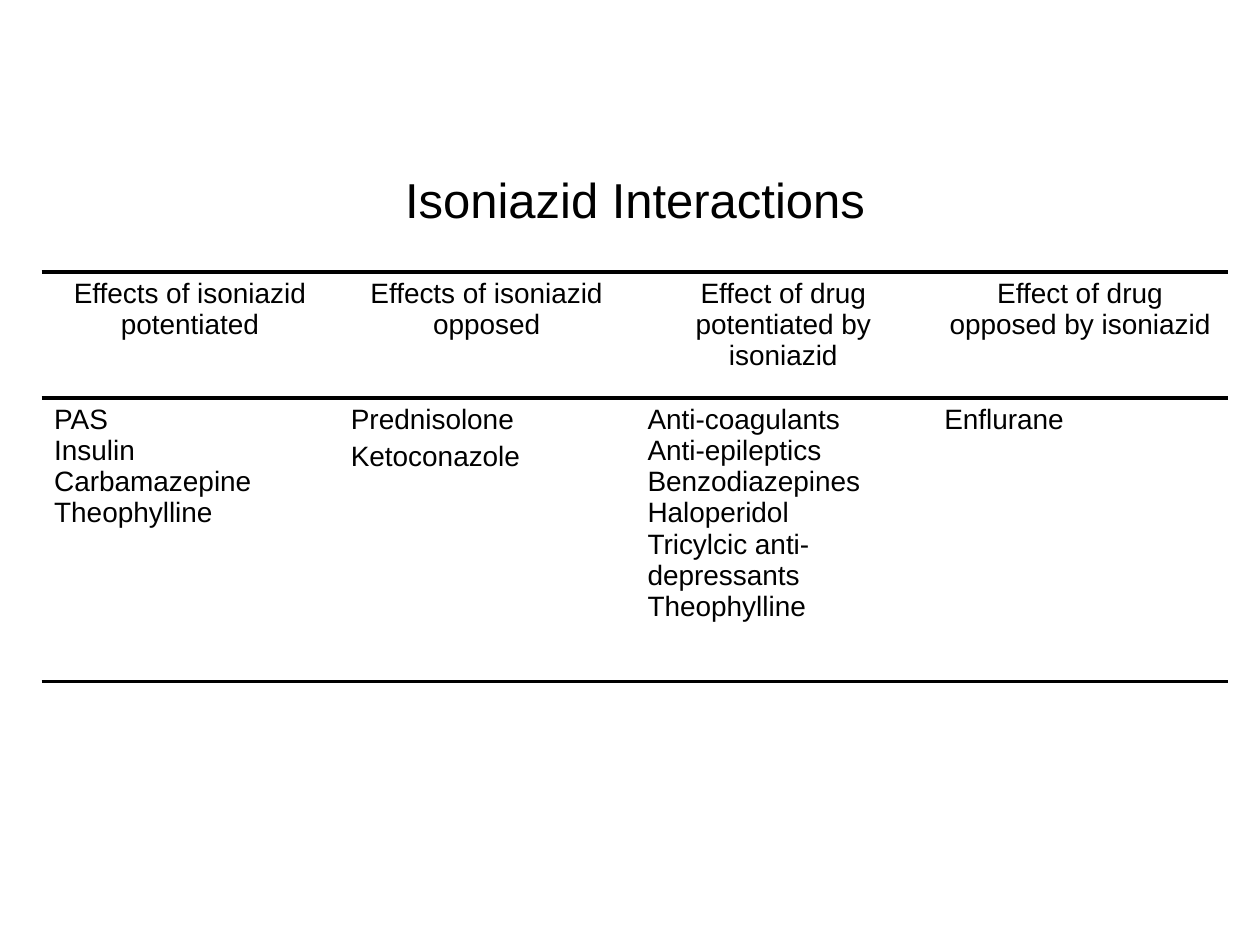
from lxml.etree import SubElement
from pptx import Presentation
from pptx.dml.color import RGBColor
from pptx.enum.text import PP_ALIGN
from pptx.oxml.ns import qn
from pptx.util import Inches, Pt

BLACK = RGBColor(0, 0, 0)
FONT = "Arial"
TITLE = "Isoniazid Interactions"
NO_GRID = "{2D5ABB26-0587-4C30-8999-92F81FD0307C}"
ROW_HEIGHTS = (0.83, 1, 2.25)
COLUMNS = [
    ("Effects of isoniazid potentiated",
     ["PAS", "Insulin", "Carbamazepine", "Theophylline"], 0),
    ("Effects of isoniazid opposed",
     ["Prednisolone", "Ketoconazole"], 3.2),
    ("Effect of drug potentiated by isoniazid",
     ["Anti-coagulants", "Anti-epileptics", "Benzodiazepines", "Haloperidol",
      "Tricylcic anti-depressants", "Theophylline"], 0),
    ("Effect of drug opposed by isoniazid", ["Enflurane"], 0),
]


def rule_below(cell):
    """Draw a black rule along the bottom edge of a cell."""
    tcPr = cell._tc.get_or_add_tcPr()
    ln = SubElement(tcPr, qn("a:lnB"), w=str(Pt(2.25)))
    fill = SubElement(ln, qn("a:solidFill"))
    SubElement(fill, qn("a:srgbClr"), val=str(BLACK))


def write_cell(cell, lines, size, align=PP_ALIGN.LEFT, gap=0):
    """Write one paragraph per line, with a gap in points between them."""
    tf = cell.text_frame
    for i, line in enumerate(lines):
        p = tf.add_paragraph() if i else tf.paragraphs[0]
        p.alignment = align
        if i:
            p.space_before = Pt(gap)
        r = p.add_run()
        r.text = line
        r.font.name = FONT
        r.font.size = Pt(size)
        r.font.color.rgb = BLACK


def add_interactions(s, left, top, width):
    """Place the titled table of drug interactions."""
    height = Inches(sum(ROW_HEIGHTS))
    table = s.shapes.add_table(len(ROW_HEIGHTS), len(COLUMNS), left, top, width, height).table
    table.first_row = table.horz_banding = False
    table._tbl.tblPr.find(qn("a:tableStyleId")).text = NO_GRID
    for row, row_height in zip(table.rows, ROW_HEIGHTS):
        row.height = Inches(row_height)
    for cell in table.iter_cells():
        rule_below(cell)
        cell.fill.background()
    table.cell(0, 0).merge(table.cell(0, len(COLUMNS) - 1))
    write_cell(table.cell(0, 0), [TITLE], 28, PP_ALIGN.CENTER)
    for col, (heading, drugs, gap) in enumerate(COLUMNS):
        write_cell(table.cell(1, col), [heading], 16, PP_ALIGN.CENTER)
        write_cell(table.cell(2, col), drugs, 16, gap=gap)


def main():
    """Build the slide and save it."""
    prs = Presentation()
    prs.slide_width, prs.slide_height = Inches(10), Inches(7.5)
    s = prs.slides.add_slide(prs.slide_layouts[6])
    add_interactions(s, Inches(0.33), Inches(1.33), Inches(9.42))
    prs.save("out.pptx")


if __name__ == "__main__":
    main()
